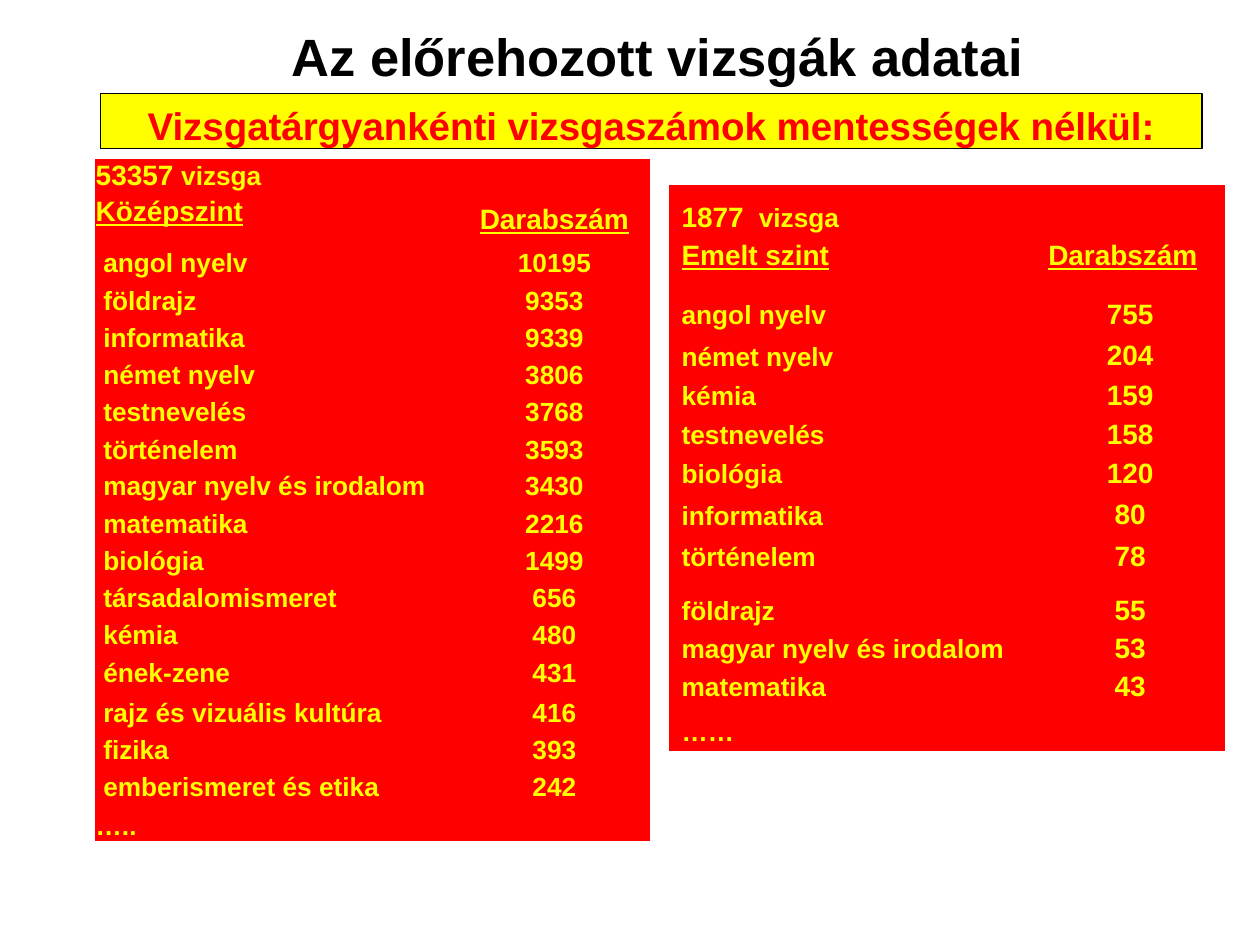
from pptx import Presentation
from pptx import util as u
from pptx.dml.color import RGBColor
from pptx.enum import shapes, text
from pptx.oxml.ns import qn

NO_GRID = "{2D5ABB26-0587-4C30-8999-92F81FD0307C}"
RED, YELLOW, BLACK = "FF0000", "FFFF00", "000000"
CENTER, LEFT = text.PP_ALIGN.CENTER, text.PP_ALIGN.LEFT


def rgb(value):
    return RGBColor.from_string(value)


def write(p, parts, color, align=LEFT, spacing=None, underline=False):
    """Fill a paragraph with bold (text, size) runs."""
    p.alignment = align
    if spacing:
        p.line_spacing = spacing
    for words, size in parts:
        r = p.add_run()
        r.text = words
        r.font.name, r.font.size, r.font.bold = "Arial", u.Pt(size), True
        r.font.color.rgb = rgb(color)
        if underline:
            r.font.underline = True


prs = Presentation()
prs.slide_width, prs.slide_height = u.Inches(10), u.Inches(7.5)
s = prs.slides.add_slide(prs.slide_layouts[5])

title = s.shapes.title
title.left, title.top = u.Inches(1.3), u.Inches(0.05)
title.width, title.height = u.Inches(7.84), u.Inches(0.78)
title.text_frame.vertical_anchor = text.MSO_ANCHOR.MIDDLE
write(title.text_frame.paragraphs[0], [("Az előrehozott vizsgák adatai", 30)], BLACK, CENTER)

banner = s.shapes.add_shape(shapes.MSO_SHAPE.RECTANGLE, u.Inches(0.8), u.Inches(0.74),
                            u.Inches(8.74), u.Inches(0.44))
banner.shadow.inherit = False
banner.fill.solid()
banner.fill.fore_color.rgb = rgb(YELLOW)
banner.line.color.rgb = rgb(BLACK)
banner.line.width = u.Pt(0.75)
tf = banner.text_frame
tf.word_wrap = True
tf.vertical_anchor = text.MSO_ANCHOR.TOP
tf.margin_top, tf.margin_bottom = u.Inches(0.07), 0
write(tf.paragraphs[0], [("Vizsgatárgyankénti vizsgaszámok mentességek nélkül:", 22)], RED, CENTER)

advanced = [("angol nyelv", 755), ("német nyelv", 204), ("kémia", 159), ("testnevelés", 158),
            ("biológia", 120), ("informatika", 80), ("történelem", 78), ("földrajz", 55),
            ("magyar nyelv és irodalom", 53), ("matematika", 43), ("……", "")]
advanced_heights = [0.72, 0.46, 0.33, 0.31, 0.31, 0.31, 0.33, 0.33, 0.43, 0.3, 0.3, 0.36]
middle = [("angol nyelv", 10195), ("földrajz", 9353), ("informatika", 9339),
          ("német nyelv", 3806), ("testnevelés", 3768), ("történelem", 3593),
          ("magyar nyelv és irodalom", 3430), ("matematika", 2216), ("biológia", 1499),
          ("társadalomismeret", 656), ("kémia", 480), ("ének-zene", 431),
          ("rajz és vizuális kultúra", 416), ("fizika", 393),
          ("emberismeret és etika", 242), ("…..", "")]
middle_heights = [0.29, 0.32, 0.34] + [0.3, 0.29] * 5 + [0.3, 0.32, 0.29, 0.3, 0.31]

# left, top, column widths, row heights, cell margins (left, top, right, bottom)
layouts = [
    (5.31, 1.47, (2.91, 1.5), advanced_heights, (0.1, 0.05, 0.1, 0.05)),
    (0.75, 1.26, (2.89, 1.52), middle_heights, (0.01, 0.01, 0.01, 0)),
]
tables = []
for left, top, widths, heights, margins in layouts:
    frame = s.shapes.add_table(len(heights), 2, u.Inches(left), u.Inches(top),
                               u.Inches(sum(widths)), u.Inches(sum(heights)))
    table = frame.table
    table.first_row = table.horz_banding = False
    table._tbl.tblPr.find(qn("a:tableStyleId")).text = NO_GRID
    for column, width in zip(table.columns, widths):
        column.width = u.Inches(width)
    for row, height in zip(table.rows, heights):
        row.height = u.Inches(height)
    for cell in table.iter_cells():
        cell.fill.solid()
        cell.fill.fore_color.rgb = rgb(RED)
        cell.vertical_anchor = text.MSO_ANCHOR.BOTTOM
        cell.margin_left, cell.margin_top, cell.margin_right, cell.margin_bottom = map(u.Inches, margins)
    tables.append(table)
advanced_table, middle_table = tables

# Advanced level: heading and count share one row
tf = advanced_table.cell(0, 0).text_frame
write(tf.paragraphs[0], [("1877 ", 16), (" vizsga", 15)], YELLOW, spacing=0.6)
p = tf.add_paragraph()
p.space_before = u.Pt(11)
write(p, [("Emelt szint", 16)], YELLOW, spacing=0.6, underline=True)
write(advanced_table.cell(0, 1).text_frame.paragraphs[0], [("Darabszám", 16)], YELLOW,
      spacing=0.6, underline=True)

# Middle level: count and heading in two rows, column heading across both
for row, parts in enumerate([[("53357 ", 16), ("vizsga", 15)], [("Középszint", 16)]]):
    cell = middle_table.cell(row, 0)
    cell.vertical_anchor = text.MSO_ANCHOR.TOP
    write(cell.text_frame.paragraphs[0], parts, YELLOW, underline=row == 1)
heading = middle_table.cell(0, 1)
heading.merge(middle_table.cell(1, 1))
write(heading.text_frame.paragraphs[0], [("Darabszám", 16)], YELLOW, CENTER, underline=True)

# table, subjects, first row, value size, line spacing of names and values, name indent
bodies = [(advanced_table, advanced, 1, 16, 0.45, 0.5, 0.1),
          (middle_table, middle, 2, 15, None, None, 0.07)]
for table, subjects, first, size, name_spacing, value_spacing, indent in bodies:
    for row, (subject, count) in enumerate(subjects, first):
        name, value = table.cell(row, 0), table.cell(row, 1)
        write(name.text_frame.paragraphs[0], [(subject, 15)], YELLOW, spacing=name_spacing)
        if count:
            name.margin_left = u.Inches(indent)
            write(value.text_frame.paragraphs[0], [(str(count), size)], YELLOW, CENTER, value_spacing)
        else:
            value.margin_top = value.margin_bottom = 0

prs.save("out.pptx")
